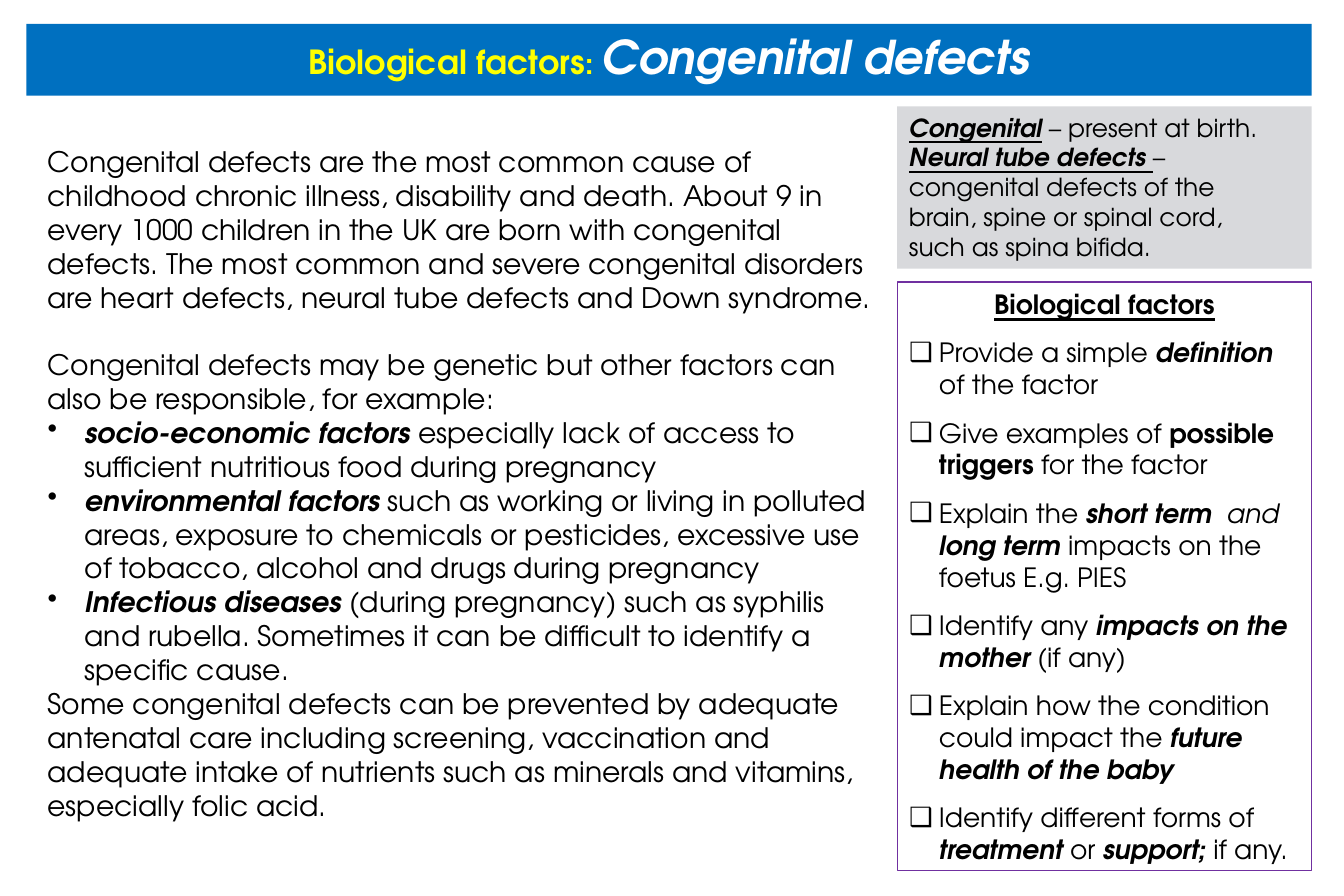
from lxml.etree import SubElement
from pptx import Presentation
from pptx.dml.color import RGBColor
from pptx.enum.shapes import MSO_SHAPE
from pptx.enum.text import MSO_ANCHOR, MSO_AUTO_SIZE, PP_ALIGN
from pptx.oxml.ns import qn
from pptx.util import Emu, Pt

PX = 9144  # 100 px to the inch
FONT = "TeX Gyre Adventor"
COLORS = {"white": "FFFFFF", "black": "000000", "yellow": "FFFF00",
          "blue": "0070C0", "grey": "D8D9DC", "purple": "7030A0"}

# left, top, width, height in px
PAGE_SIZE = (1125, 750)
TITLE_AT = (22, 20, 1076, 60)
TERMS_AT = (751, 89, 347, 136)
CHECKLIST_AT = (751, 236, 347, 493)
ARTICLE_AT = (30, 116, 710, 611)

# A run is plain text or (text, style): b bold, i italic, u underlined
TITLE_RUNS = [("Biological factors", "b", 20, "yellow"), (": ", "b", 18, "yellow"),
              ("Congenital defects", "bi", 28, "white")]
TERMS = [
    [("Congenital", "biu"), " – present at birth."],
    [("Neural tube defects ", "biu"), "–"],
    ["congenital defects of the"],
    ["brain, spine or spinal cord,"],
    ["such as spina bifida."],
]
CHECKLIST_HEADING = [("Biological factors", "bu")]
CHECKLIST = [
    ["Provide a simple ", ("definition", "bi"), " of the factor"],
    ["Give examples of ", ("possible triggers", "b"), " for the factor"],
    ["Explain the ", ("short term ", "bi"), (" and ", "i"), ("long term ", "bi"),
     "impacts on the foetus E.g. PIES"],
    ["Identify any ", ("impacts on the mother ", "bi"), "(if any)"],
    ["Explain how the condition could impact the ", ("future health of the baby", "bi")],
    ["Identify different forms of ", ("treatment", "bi"), " or ", ("support; ", "bi"), "if any."],
]
INTRO = ["Congenital defects are the most common cause of childhood chronic illness, "
         "disability and death. About 9 in every 1000 children in the UK are born with "
         "congenital defects. The most common and severe congenital disorders are heart "
         "defects, neural tube defects and Down syndrome."]
CAUSES_LEAD = ["Congenital defects may be genetic but other factors can also be "
               "responsible, for example:"]
CAUSES = [
    [("socio-economic factors ", "bi"),
     "especially lack of access to sufficient nutritious food during pregnancy"],
    [("environmental factors ", "bi"),
     "such as working or living in polluted areas, exposure to chemicals or pesticides, "
     "excessive use of tobacco, alcohol and drugs during pregnancy"],
    [("Infectious diseases ", "bi"),
     "(during pregnancy) such as syphilis and rubella. Sometimes it can be difficult to "
     "identify a specific cause."],
]
PREVENTION = ["Some congenital defects can be prevented by adequate antenatal care including "
              "screening, vaccination and adequate intake of nutrients such as minerals and "
              "vitamins, especially folic acid."]


def rgb(name):
    return RGBColor.from_string(COLORS[name])


def place(box, at):
    for side, length in zip(("left", "top", "width", "height"), at):
        setattr(box, side, Emu(length * PX))


def paint(fill, color):
    fill.solid()
    fill.fore_color.rgb = rgb(color)


def set_frame(box, anchor=MSO_ANCHOR.TOP):
    formats = {"word_wrap": True, "auto_size": MSO_AUTO_SIZE.NONE, "vertical_anchor": anchor}
    for name, value in formats.items():
        setattr(box.text_frame, name, value)


def add_run(para, text, style="", size=16, color="black"):
    span = para.add_run()
    span.text = text
    formats = {"name": FONT, "size": Pt(size), "bold": "b" in style,
               "italic": "i" in style, "underline": "u" in style}
    for name, value in formats.items():
        setattr(span.font, name, value)
    span.font.color.rgb = rgb(color)


def add_para(box, runs, size, before=0, align=PP_ALIGN.LEFT, bullet=None, indent=0):
    frame = box.text_frame
    para = frame.paragraphs[0] if not frame.text else frame.add_paragraph()
    formats = {"alignment": align, "space_before": Pt(before), "line_spacing": 1.0}
    for name, value in formats.items():
        setattr(para, name, value)
    props = para._p.get_or_add_pPr()
    props.set("marL", str(indent * PX))
    props.set("indent", str(-indent * PX))
    if bullet:
        SubElement(props, qn("a:buChar")).set("char", bullet)
    else:
        SubElement(props, qn("a:buNone"))
    for run in runs:
        text, style = (run, "") if isinstance(run, str) else run
        add_run(para, text, style, size)


def build_title(page):
    title = page.shapes.title
    place(title, TITLE_AT)
    paint(title.fill, "blue")
    set_frame(title, MSO_ANCHOR.MIDDLE)
    para = title.text_frame.paragraphs[0]
    para.alignment = PP_ALIGN.CENTER
    para.line_spacing = 0.9
    for run in TITLE_RUNS:
        add_run(para, *run)


def build_checklist(page):
    box = page.placeholders[1]
    place(box, CHECKLIST_AT)
    box.line.color.rgb = rgb("purple")
    box.line.width = Pt(0.75)
    set_frame(box)
    add_para(box, CHECKLIST_HEADING, 16, 10, PP_ALIGN.CENTER)
    for runs in CHECKLIST:
        add_para(box, runs, 16, 10, bullet="❑", indent=25)


def build_terms(page):
    box = page.shapes.add_shape(MSO_SHAPE.RECTANGLE, 0, 0, 0, 0)
    place(box, TERMS_AT)
    box.shadow.inherit = False
    paint(box.fill, "grey")
    box.line.fill.background()
    set_frame(box)
    for runs in TERMS:
        add_para(box, runs, 15)


def build_article(page):
    box = page.shapes.add_textbox(0, 0, 0, 0)
    place(box, ARTICLE_AT)
    set_frame(box)
    add_para(box, INTRO, 17)
    add_para(box, CAUSES_LEAD, 17, before=20.4)
    for runs in CAUSES:
        add_para(box, runs, 17, bullet="•", indent=31)
    add_para(box, PREVENTION, 17)


def main():
    deck = Presentation()
    deck.slide_width, deck.slide_height = (Emu(side * PX) for side in PAGE_SIZE)
    page = deck.slides.add_slide(deck.slide_layouts[1])
    paint(page.background.fill, "white")
    for build in (build_title, build_checklist, build_terms, build_article):
        build(page)
    deck.save("out.pptx")


if __name__ == "__main__":
    main()
